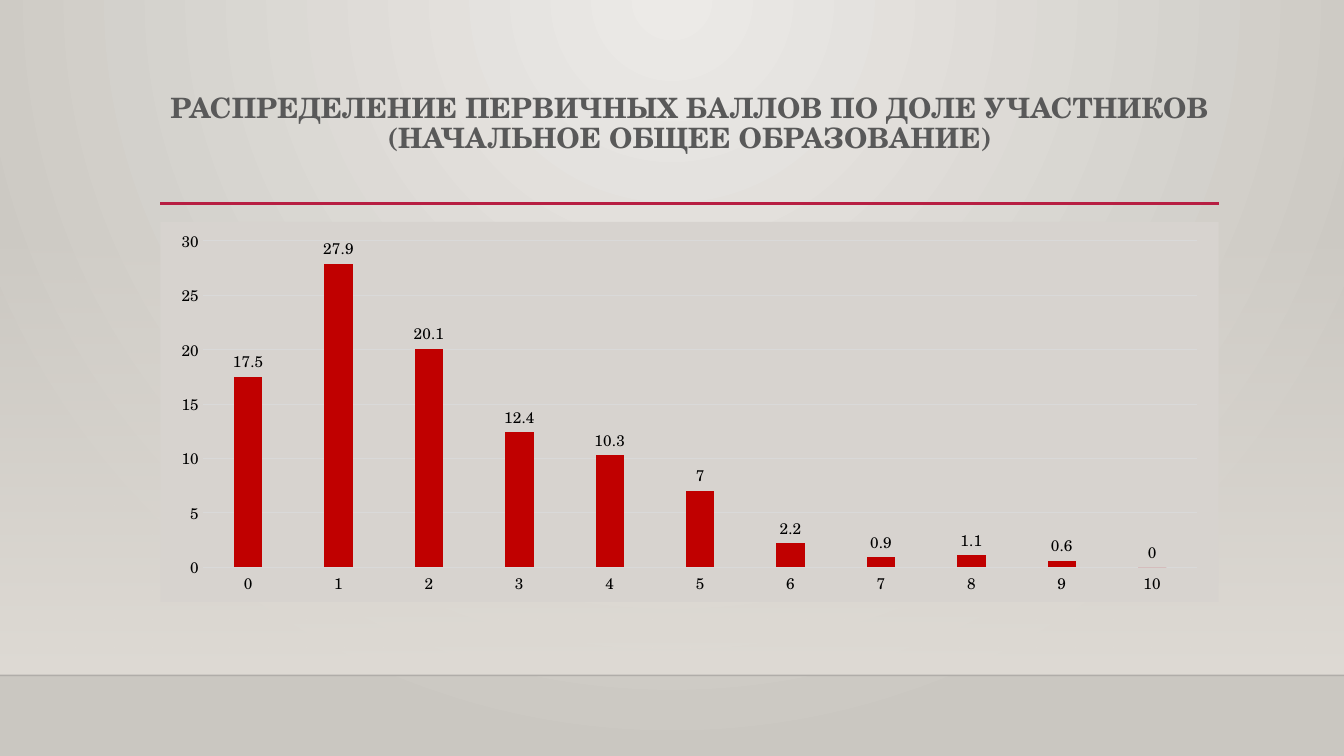
import pptx
import pptx.chart.data
import pptx.dml.color
import pptx.enum.chart
import pptx.enum.shapes
import pptx.enum.text
import pptx.oxml
import pptx.oxml.ns
import pptx.util
from lxml import etree

Cm, Pt = pptx.util.Cm, pptx.util.Pt
qn = pptx.oxml.ns.qn

COLORS = {
    "bg_light": "ECEAE7", "bg_dark": "CAC7C1", "wall": "DFDBD5",
    "floor_edge": "000001", "accent": "B71E42", "title": "595959",
    "text": "000000", "grid": "D9D9D9", "plate": "D7D3CF", "bar": "C00000",
}
FONT = "TeX Gyre Schola"
WIDTH, HEIGHT = 33.87, 19.05
LEFT, CONTENT_WIDTH = 4.04, 26.67
FLOOR = 17.02
SHARES = [17.5, 27.9, 20.1, 12.4, 10.3, 7, 2.2, 0.9, 1.1, 0.6, 0]


def rgb(name):
    return pptx.dml.color.RGBColor.from_string(COLORS[name])


def set_font(font, size, color, name=FONT, bold=False):
    font.name, font.size, font.bold = name, Pt(size), bold
    font.color.rgb = rgb(color)


def add_text(tf, text, align=None, spacing=None, **style):
    p = tf.paragraphs[0]
    p.alignment, p.line_spacing = align, spacing
    for i, line in enumerate(text.split("\n")):
        if i:
            p.add_line_break()
        r = p.add_run()
        r.text = line
        set_font(r.font, **style)


def set_alpha(element, percent):
    etree.SubElement(element, qn("a:alpha"), val=str(percent * 1000))


class SlideBuilder:
    def __init__(self, prs):
        self.s = prs.slides.add_slide(prs.slide_layouts[6])

    def gradient(self, fill, first, last):
        fill.gradient()
        for stop, color, position in zip(fill.gradient_stops, (first, last), (0, 1)):
            stop.color.rgb = rgb(color)
            stop.position = position

    def background(self):
        self.gradient(self.s.background.fill, "bg_light", "bg_dark")
        grad = self.s.element.find(".//" + qn("a:gradFill"))
        grad.remove(grad.find(qn("a:lin")))
        circle = etree.SubElement(grad, qn("a:path"), path="circle")
        etree.SubElement(circle, qn("a:fillToRect"),
                         l="43000", t="0", r="43000", b="100000")

    def fading_panel(self, x, y, w, h, color):
        sp = self.s.shapes.add_shape(pptx.enum.shapes.MSO_SHAPE.RECTANGLE,
                                     Cm(x), Cm(y), Cm(w), Cm(h))
        sp.shadow.inherit = False
        sp.line.fill.background()
        self.gradient(sp.fill, color, color)
        sp.fill.gradient_angle = 270
        set_alpha(sp.element.find(".//" + qn("a:srgbClr")), 0)

    def line(self, x1, x2, y, color, width, alpha=None):
        cn = self.s.shapes.add_connector(pptx.enum.shapes.MSO_CONNECTOR.STRAIGHT,
                                         Cm(x1), Cm(y), Cm(x2), Cm(y))
        cn.line.color.rgb, cn.line.width = rgb(color), Pt(width)
        if alpha is not None:
            set_alpha(cn.element.find(".//" + qn("a:srgbClr")), alpha)
        etree.SubElement(cn.element.spPr, qn("a:effectLst"))

    def text(self, x, y, w, h, text, **style):
        tf = self.s.shapes.add_textbox(Cm(x), Cm(y), Cm(w), Cm(h)).text_frame
        tf.word_wrap = True
        tf.vertical_anchor = pptx.enum.text.MSO_ANCHOR.TOP
        add_text(tf, text, **style)

    def column_chart(self, x, y, w, h, categories, values):
        enum = pptx.enum.chart
        data = pptx.chart.data.CategoryChartData()
        data.categories = categories
        data.add_series("Series 1", values)
        chart = self.s.shapes.add_chart(enum.XL_CHART_TYPE.COLUMN_CLUSTERED,
                                        Cm(x), Cm(y), Cm(w), Cm(h), data).chart
        chart.has_title = chart.has_legend = False
        set_font(chart.font, 10, "text", name="Calibri")

        # Plate behind the chart
        plate = pptx.oxml.parse_xml(
            f'<c:spPr {pptx.oxml.ns.nsdecls("c", "a")}><a:solidFill>'
            f'<a:srgbClr val="{COLORS["plate"]}"/></a:solidFill>'
            '<a:ln><a:noFill/></a:ln></c:spPr>')
        chart.element.find(qn("c:txPr")).addprevious(plate)

        # Axes
        for axis in (chart.category_axis, chart.value_axis):
            axis.major_tick_mark = axis.minor_tick_mark = enum.XL_TICK_MARK.NONE
            set_font(axis.tick_labels.font, 11, "text")
        grid = chart.value_axis.major_gridlines.format.line
        for line in (chart.category_axis.format.line, grid):
            line.color.rgb, line.width = rgb("grid"), Pt(0.75)
        chart.value_axis.format.line.fill.background()
        chart.value_axis.minimum_scale, chart.value_axis.maximum_scale = 0, 30
        chart.value_axis.major_unit = 5

        # Columns and their labels
        plot = chart.plots[0]
        plot.gap_width, plot.overlap, plot.vary_by_categories = 219, -27, False
        fill = plot.series[0].format.fill
        fill.solid()
        fill.fore_color.rgb = rgb("bar")
        labels = plot.series[0].data_labels
        labels.show_value = True
        labels.position = enum.XL_LABEL_POSITION.OUTSIDE_END
        set_font(labels.font, 11, "text")


def main():
    prs = pptx.Presentation()
    prs.slide_width, prs.slide_height = Cm(WIDTH), Cm(HEIGHT)
    slide = SlideBuilder(prs)

    # Backdrop
    slide.background()
    slide.fading_panel(0, 5.61, WIDTH, FLOOR - 5.61, "wall")
    slide.line(0, WIDTH, FLOOR, "floor_edge", 1, alpha=20)

    # Title
    slide.line(LEFT, LEFT + CONTENT_WIDTH, 5.13, "accent", 2.5)
    slide.text(LEFT, 2.24, CONTENT_WIDTH, 2.92,
               "РАСПРЕДЕЛЕНИЕ ПЕРВИЧНЫХ БАЛЛОВ ПО ДОЛЕ УЧАСТНИКОВ\n"
               "(НАЧАЛЬНОЕ ОБЩЕЕ ОБРАЗОВАНИЕ)",
               align=pptx.enum.text.PP_ALIGN.CENTER, spacing=0.9,
               size=20, color="title", bold=True)

    # Score distribution
    slide.column_chart(LEFT, 5.59, CONTENT_WIDTH, 9.58,
                       [str(score) for score in range(len(SHARES))], SHARES)

    prs.save("out.pptx")


if __name__ == "__main__":
    main()
